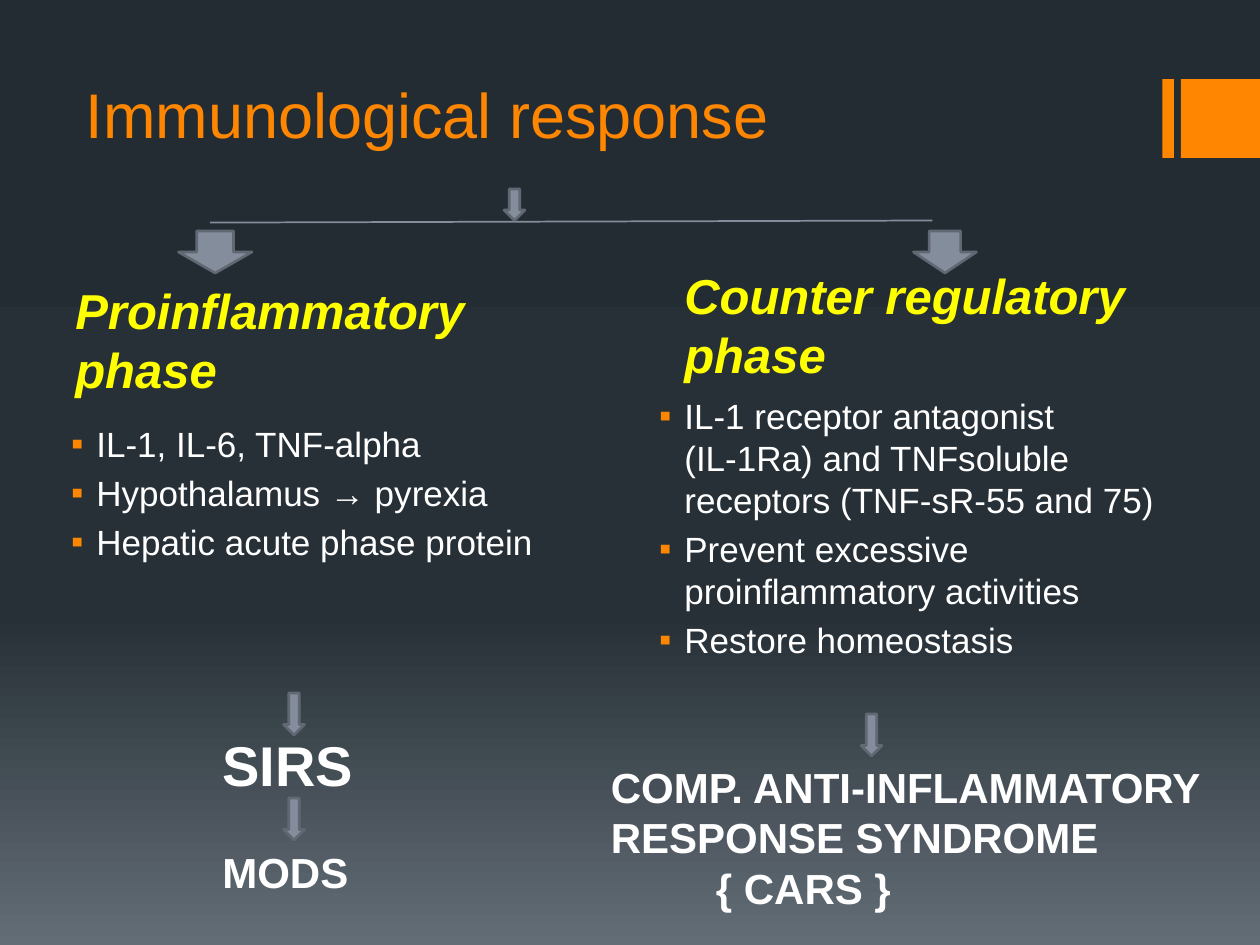
from copy import deepcopy

from lxml import etree
from pptx import Presentation
from pptx import util as u
from pptx.dml import color
from pptx.enum import shapes, text
from pptx.oxml import ns

ORANGE, YELLOW, WHITE = "FF8600", "FFFF00", "FFFFFF"
GREY, OUTLINE = "838D9B", "616873"
BACKGROUND = [(0, "242C33"), (0.65, "273037"), (1, "636D76")]


def rgb(value):
    """Turn a hex string into a colour."""
    return color.RGBColor.from_string(value)


def paint_background(slide):
    """Fill the slide with a vertical gradient of three stops."""
    fill = slide.background.fill
    fill.gradient()
    fill.gradient_angle = 270
    stop_list = slide.element.find(".//" + ns.qn("a:gsLst"))
    stop_list.append(deepcopy(stop_list[-1]))
    for stop, (position, value) in zip(fill.gradient_stops, BACKGROUND):
        stop.position = position
        stop.color.rgb = rgb(value)


def add_block(slide, kind, box, fill, outline=None):
    """Add a filled preset shape, outlined on request."""
    shape = slide.shapes.add_shape(kind, *map(u.Pt, box))
    shape.shadow.inherit = False
    shape.fill.solid()
    shape.fill.fore_color.rgb = rgb(fill)
    if outline:
        shape.line.color.rgb = rgb(outline)
        shape.line.width = u.Pt(1.5)
    else:
        shape.line.fill.background()


def add_line(slide, start, end):
    """Add a thin straight line between two points."""
    line = slide.shapes.add_connector(
        shapes.MSO_CONNECTOR.STRAIGHT, *map(u.Pt, start + end))
    line.line.color.rgb = rgb(GREY)
    line.line.width = u.Pt(1)
    etree.SubElement(line.element.spPr, ns.qn("a:effectLst"))


def add_text(slide, box, lines, size, value=WHITE, bold=False, italic=False,
             anchor=text.MSO_ANCHOR.TOP):
    """Add a wrapping text box and return its paragraphs."""
    frame = slide.shapes.add_textbox(*map(u.Pt, box)).text_frame
    frame.word_wrap = True
    frame.vertical_anchor = anchor
    for index, line in enumerate(lines):
        paragraph = frame.add_paragraph() if index else frame.paragraphs[0]
        run = paragraph.add_run()
        run.text = line
        font = run.font
        font.name, font.size = "Arial", u.Pt(size)
        font.bold, font.italic = bold, italic
        font.color.rgb = rgb(value)
    return frame.paragraphs


def indent(paragraph, left, first=0):
    """Set the left margin and first-line indent of a paragraph."""
    properties = paragraph._p.get_or_add_pPr()
    properties.set("marL", str(u.Pt(left)))
    properties.set("indent", str(u.Pt(first)))
    return properties


def add_bullets(slide, box, lines):
    """Add a list with small orange square bullets."""
    for paragraph in add_text(slide, box, lines, 20):
        paragraph.space_before = u.Pt(4)
        properties = indent(paragraph, 18, -14.4)
        bullet_color = etree.SubElement(properties, ns.qn("a:buClr"))
        etree.SubElement(bullet_color, ns.qn("a:srgbClr"), val=ORANGE)
        etree.SubElement(properties, ns.qn("a:buFont"), typeface="Arial")
        etree.SubElement(properties, ns.qn("a:buChar"), char="▪")


def main():
    """Build the slide and save it."""
    presentation = Presentation()
    presentation.slide_width, presentation.slide_height = u.Pt(720), u.Pt(540)
    slide = presentation.slides.add_slide(presentation.slide_layouts[6])
    paint_background(slide)
    bottom = text.MSO_ANCHOR.BOTTOM

    for left, width in ((664.2, 6.6), (674.8, 45.2)):
        add_block(slide, shapes.MSO_SHAPE.RECTANGLE,
                  (left, 45.2, width, 45), ORANGE)
    add_text(slide, (42, 0, 648, 90), ["Immunological response"], 36, ORANGE,
             anchor=bottom)

    for box, heading in (((36, 153, 300, 78), "Proinflammatory phase"),
                         ((384, 144.5, 318, 78), "Counter regulatory phase")):
        add_text(slide, box, [heading], 28, YELLOW, True, True, bottom)

    add_bullets(slide, (30, 238, 318, 170), [
        "IL-1, IL-6, TNF-alpha",
        "Hypothalamus → pyrexia",
        "Hepatic acute phase protein"])
    add_bullets(slide, (366, 222, 318, 278), [
        "IL-1 receptor antagonist (IL-1Ra) and TNFsoluble receptors "
        "(TNF-sR-55 and 75)",
        "Prevent excessive proinflammatory activities",
        "Restore homeostasis"])

    add_line(slide, (120, 127.2), (532.8, 126))
    for box in ((102, 132, 42, 24), (522, 132, 36, 24), (288, 108, 12, 18),
                (162, 396, 12, 24), (162, 456, 12, 24), (492, 408, 12, 24)):
        add_block(slide, shapes.MSO_SHAPE.DOWN_ARROW, box, GREY, OUTLINE)

    add_text(slide, (120, 414, 108, 46), ["SIRS"], 32, bold=True)
    add_text(slide, (120, 480, 108, 36), ["MODS"], 24, bold=True)
    outcome = add_text(slide, (342, 431.5, 366, 94), [
        "COMP. ANTI-INFLAMMATORY RESPONSE SYNDROME", "{ CARS }"], 24, bold=True)
    indent(outcome[1], 60)

    presentation.save("out.pptx")


if __name__ == "__main__":
    main()
